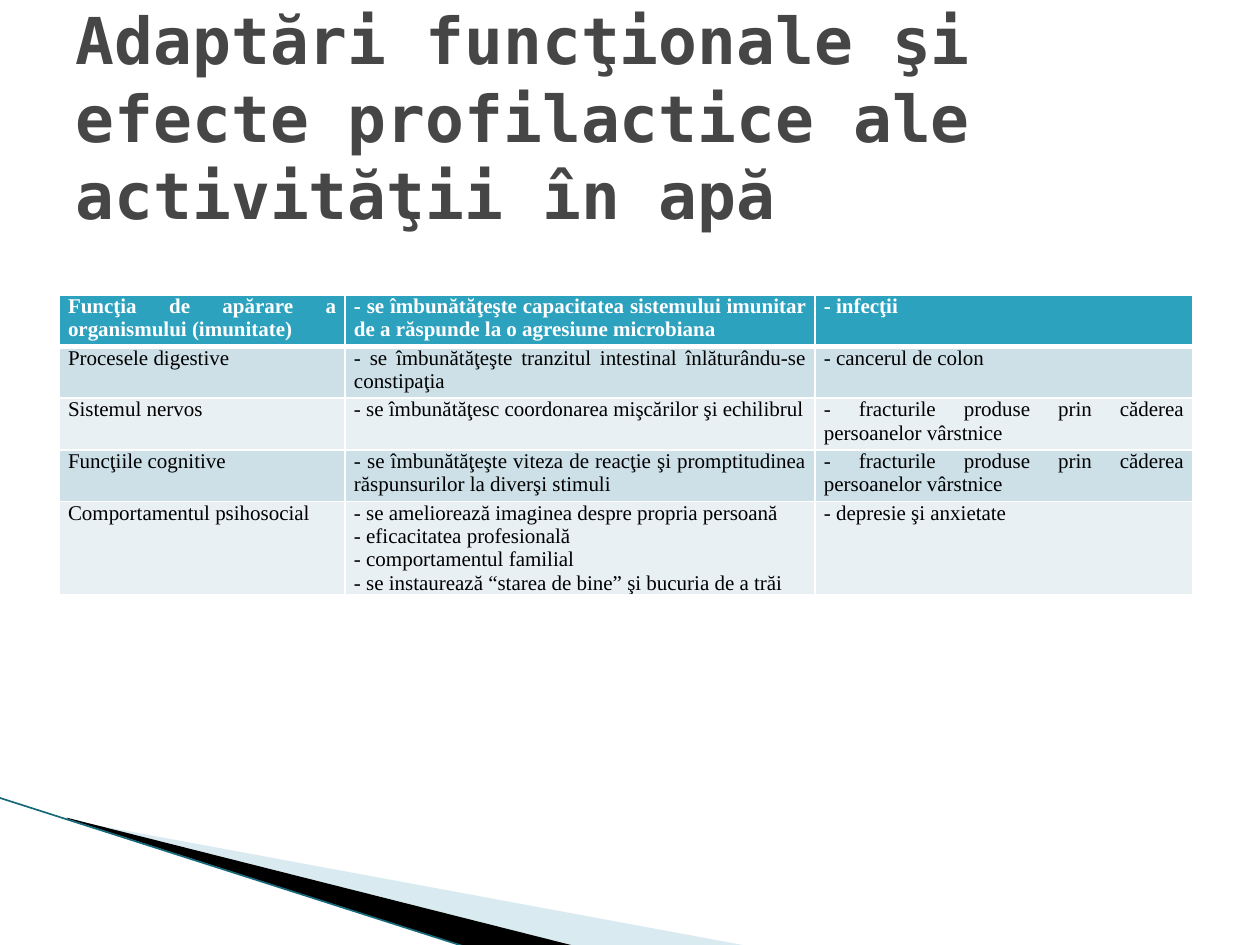
from lxml import etree
from pptx import Presentation
from pptx.dml.color import RGBColor
from pptx.enum.shapes import MSO_CONNECTOR
from pptx.enum.text import MSO_ANCHOR, PP_ALIGN
from pptx.oxml import parse_xml
from pptx.oxml.ns import nsdecls, qn
from pptx.util import Inches, Pt

STRAIGHT = MSO_CONNECTOR.STRAIGHT
MIDDLE = MSO_ANCHOR.MIDDLE
LEFT = PP_ALIGN.LEFT
JUSTIFY = PP_ALIGN.JUSTIFY

WHITE = RGBColor(0xFF, 0xFF, 0xFF)
BLACK = RGBColor(0, 0, 0)
GRAPHITE = RGBColor(0x46, 0x46, 0x46)
TEAL = RGBColor(0x2D, 0xA2, 0xBF)
DEEP_TEAL = RGBColor(0x16, 0x69, 0x7A)
PALE_BLUE = RGBColor(0xA0, 0xCB, 0xDC)
BANDS = [RGBColor(0xCD, 0xE0, 0xE8), RGBColor(0xE8, 0xF0, 0xF4)]

TITLE = "Adaptări funcţionale şi efecte profilactice ale activităţii în apă"
FRACTURES = "- fracturile produse prin căderea persoanelor vârstnice"
ROWS = [
    ["Funcţia de apărare a organismului (imunitate)",
     "- se îmbunătăţeşte capacitatea sistemului imunitar de a răspunde la o agresiune microbiana",
     "- infecţii"],
    ["Procesele digestive",
     "- se îmbunătăţeşte tranzitul intestinal înlăturându-se constipaţia",
     "- cancerul de colon"],
    ["Sistemul nervos",
     "- se îmbunătăţesc coordonarea mişcărilor şi echilibrul",
     FRACTURES],
    ["Funcţiile cognitive",
     "- se îmbunătăţeşte viteza de reacţie şi promptitudinea răspunsurilor la diverşi stimuli",
     FRACTURES],
    ["Comportamentul psihosocial",
     "- se ameliorează imaginea despre propria persoană\n"
     "- eficacitatea profesională\n"
     "- comportamentul familial\n"
     "- se instaurează “starea de bine” şi bucuria de a trăi",
     "- depresie şi anxietate"],
]
COLUMN_WIDTHS = [2.27, 3.73, 3]
ROW_HEIGHT = 0.41


class SlideBuilder:
    title_format = {"name": "DejaVu Sans Mono", "size": Pt(36.9), "bold": True}
    cell_format = {"name": "Times New Roman", "size": Pt(12)}
    cell_margins = {"margin_left": Inches(0.07), "margin_right": Inches(0.07),
                    "margin_top": 0, "margin_bottom": 0}

    def __init__(self, page):
        self.page = page

    def format_font(self, font, color, values):
        for name, value in values.items():
            setattr(font, name, value)
        font.color.rgb = color

    def title(self, text, left, top, width, height):
        box = self.page.shapes.title
        place = {"left": left, "top": top, "width": width, "height": height}
        for name, value in place.items():
            setattr(box, name, Inches(value))
        frame = box.text_frame
        frame.text = text
        frame.word_wrap = True
        frame.vertical_anchor = MIDDLE
        para = frame.paragraphs[0]
        para.alignment = LEFT
        self.format_font(para.runs[0].font, GRAPHITE, self.title_format)

    def wedge(self, points, color, opacity=100):
        corners = [(Inches(x), Inches(y)) for x, y in points]
        builder = self.page.shapes.build_freeform(*corners[0])
        builder.add_line_segments(corners[1:], close=True)
        shape = builder.convert_to_shape()
        shape.shadow.inherit = False
        shape.line.fill.background()
        shape.fill.solid()
        shape.fill.fore_color.rgb = color
        if opacity < 100:
            fill_color = shape.element.spPr.find(".//" + qn("a:srgbClr"))
            etree.SubElement(fill_color, qn("a:alpha"), val=str(opacity * 1000))

    def line(self, start, end, color, width):
        ends = [Inches(value) for value in (*start, *end)]
        connector = self.page.shapes.add_connector(STRAIGHT, *ends)
        connector.line.color.rgb = color
        connector.line.width = Pt(width)
        etree.SubElement(connector.element.spPr, qn("a:effectLst"))

    def borders(self, cell, widths):
        properties = cell._tc.get_or_add_tcPr()
        for side, width in widths.items():
            properties.append(parse_xml(
                f'<a:ln{side} {nsdecls("a")} w="{Pt(width)}"><a:solidFill>'
                f'<a:srgbClr val="{WHITE}"/></a:solidFill></a:ln{side}>'))

    def cell(self, cell, text, row):
        header = row == 0
        self.borders(cell, {"L": 1, "R": 1, "T": 3 if row == 1 else 1,
                            "B": 3 if header else 1})
        cell.fill.solid()
        cell.fill.fore_color.rgb = TEAL if header else BANDS[(row - 1) % 2]
        for name, value in self.cell_margins.items():
            setattr(cell, name, value)
        cell.text_frame.text = text
        for para in cell.text_frame.paragraphs:
            para.alignment = JUSTIFY
            self.format_font(para.runs[0].font, WHITE if header else BLACK,
                             {**self.cell_format, "bold": header})

    def table(self, rows, left, top, widths, row_height):
        frame = self.page.shapes.add_table(
            len(rows), len(widths), Inches(left), Inches(top),
            Inches(sum(widths)), Inches(row_height * len(rows)))
        table = frame.table
        for column, width in zip(table.columns, widths):
            column.width = Inches(width)
        for row, texts in enumerate(rows):
            table.rows[row].height = Inches(row_height)
            for column, text in enumerate(texts):
                self.cell(table.cell(row, column), text, row)


def main():
    deck = Presentation()
    deck.slide_width = Inches(10)
    deck.slide_height = Inches(7.5)
    slide = SlideBuilder(deck.slides.add_slide(deck.slide_layouts[5]))
    slide.wedge([(0.55, 6.51), (5.95, 7.51), (4.56, 7.51), (0.55, 6.5)], PALE_BLUE, 40)
    slide.wedge([(0.53, 6.49), (4.57, 7.51), (3.72, 7.52), (0.54, 6.5)], BLACK)
    slide.line((-0.01, 6.33), (3.71, 7.52), DEEP_TEAL, 0.95)
    slide.table(ROWS, 0.47, 2.34, COLUMN_WIDTHS, ROW_HEIGHT)
    slide.title(TITLE, 0.5, 0.3, 9, 1.25)
    deck.save("out.pptx")


if __name__ == "__main__":
    main()
